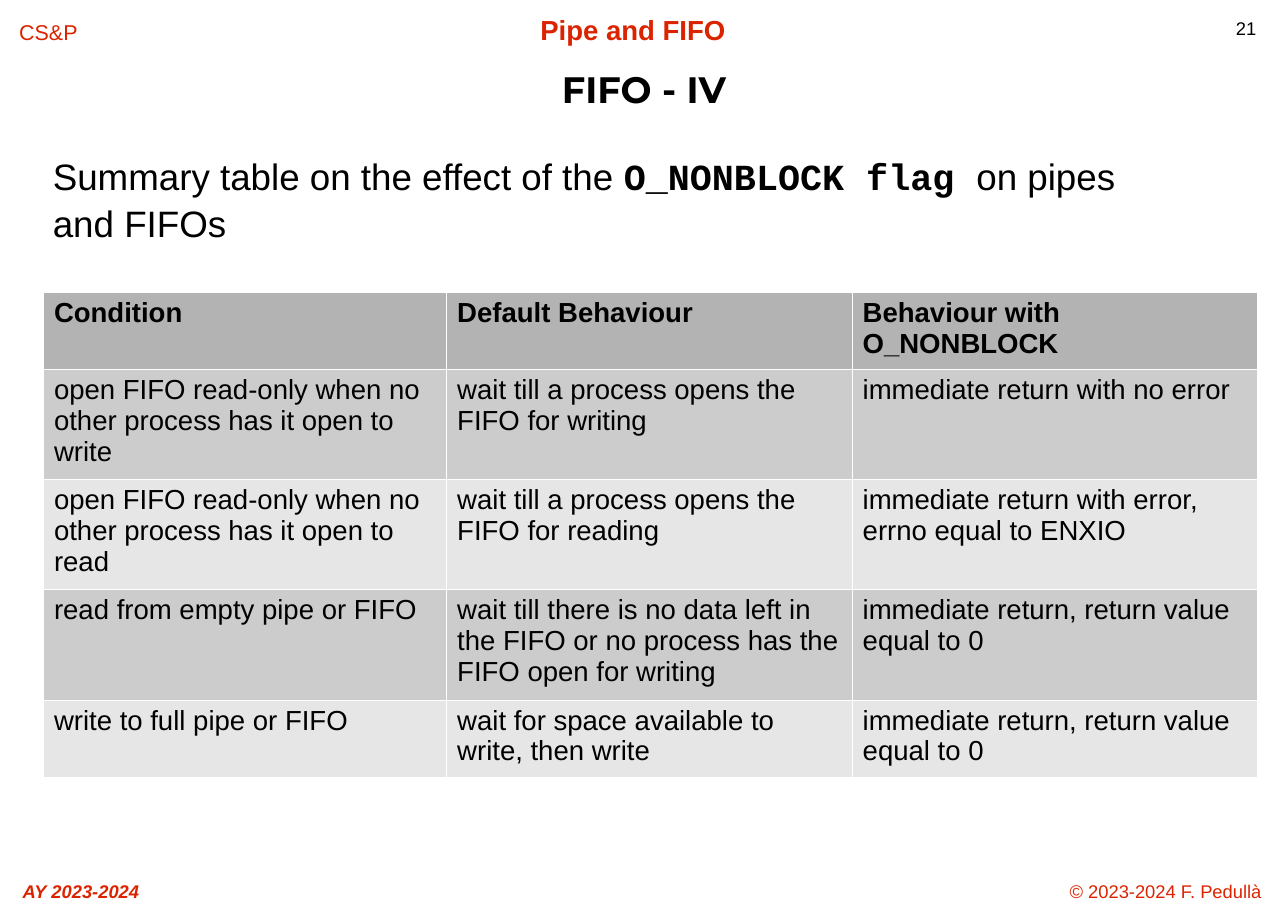
import pptx
import pptx.dml.color
import pptx.enum.text
import pptx.oxml
import pptx.oxml.ns
import pptx.util

Inches, Pt = pptx.util.Inches, pptx.util.Pt
RGBColor = pptx.dml.color.RGBColor
ALIGN, ANCHOR = pptx.enum.text.PP_ALIGN, pptx.enum.text.MSO_ANCHOR

BLACK = RGBColor(0x00, 0x00, 0x00)
RED = RGBColor(0xDC, 0x23, 0x00)
HEADER_GREY = RGBColor(0xB3, 0xB3, 0xB3)
DARK_GREY = RGBColor(0xCC, 0xCC, 0xCC)
LIGHT_GREY = RGBColor(0xE6, 0xE6, 0xE6)

COLUMN_WIDTHS = [3.66, 3.68, 3.68]
ROW_HEIGHTS = [0.66, 0.94, 0.94, 0.94, 0.66]
BEHAVIOURS = [
    ["Condition", "Default Behaviour", "Behaviour with O_NONBLOCK"],
    ["open FIFO read-only when no other process has it open to write",
     "wait till a process opens the FIFO for writing",
     "immediate return with no error"],
    ["open FIFO read-only when no other process has it open to read",
     "wait till a process opens the FIFO for reading",
     "immediate return with error, errno equal to ENXIO"],
    ["read from empty pipe or FIFO",
     "wait till there is no data left in the FIFO or no process has the FIFO open for writing",
     "immediate return, return value equal to 0"],
    ["write to full pipe or FIFO",
     "wait for space available to write, then write",
     "immediate return, return value equal to 0"],
]


def add_run(p, text, size=18, font="Arial", color=BLACK, bold=False, italic=False):
    r = p.add_run()
    r.text = text
    r.font.name, r.font.size = font, Pt(size)
    r.font.bold, r.font.italic = bold, italic
    r.font.color.rgb = color


def add_white_borders(cell):
    tcPr = cell._tc.get_or_add_tcPr()
    for side in ("lnL", "lnR", "lnT", "lnB"):
        tcPr.append(pptx.oxml.parse_xml(
            f'<a:{side} {pptx.oxml.ns.nsdecls("a")} w="720"><a:solidFill>'
            f'<a:srgbClr val="FFFFFF"/></a:solidFill></a:{side}>'))


class LectureSlide:
    def __init__(self, prs):
        self.s = prs.slides.add_slide(prs.slide_layouts[5])

    def title(self, text, left, top, width, height):
        sp = self.s.shapes.title
        sp.left, sp.top = Inches(left), Inches(top)
        sp.width, sp.height = Inches(width), Inches(height)
        tf = sp.text_frame
        tf.vertical_anchor = ANCHOR.MIDDLE
        tf.auto_size = pptx.enum.text.MSO_AUTO_SIZE.NONE
        p = tf.paragraphs[0]
        p.alignment, p.line_spacing = ALIGN.CENTER, 0.85
        add_run(p, text, size=24, font="Montserrat", bold=True)

    def text_box(self, left, top, width, height, align=ALIGN.LEFT, spacing=1.01):
        """Add an empty wrapping box and return its text frame."""
        sp = self.s.shapes.add_textbox(Inches(left), Inches(top), Inches(width), Inches(height))
        tf = sp.text_frame
        tf.word_wrap = True
        p = tf.paragraphs[0]
        p.alignment, p.line_spacing = align, spacing
        return tf

    def label(self, text, left, top, width, height, align=ALIGN.CENTER, **fmt):
        tf = self.text_box(left, top, width, height, align)
        add_run(tf.paragraphs[0], text, **fmt)

    def summary(self, runs, left, top, width, height):
        tf = self.text_box(left, top, width, height, spacing=1.05)
        tf.margin_left = tf.margin_right = tf.margin_top = tf.margin_bottom = 0
        for text, fmt in runs:
            add_run(tf.paragraphs[0], text, size=24, **fmt)

    def table(self, rows, left, top, widths, heights):
        table = self.s.shapes.add_table(
            len(rows), len(widths), Inches(left), Inches(top),
            Inches(sum(widths)), Inches(sum(heights))).table
        table.horz_banding = False
        for column, width in zip(table.columns, widths):
            column.width = Inches(width)
        for i, (row, height) in enumerate(zip(rows, heights)):
            table.rows[i].height = Inches(height)
            band = DARK_GREY if i % 2 else LIGHT_GREY
            for j, text in enumerate(row):
                cell = table.cell(i, j)
                add_white_borders(cell)
                cell.fill.solid()
                cell.fill.fore_color.rgb = band if i else HEADER_GREY
                add_run(cell.text_frame.paragraphs[0], text, bold=i == 0)


def main():
    prs = pptx.Presentation()
    prs.slide_width, prs.slide_height = Inches(11.69), Inches(8.27)
    slide = LectureSlide(prs)
    slide.label("21", 11.12, 0.1, 0.57, 0.35, align=ALIGN.LEFT, size=12)
    slide.label("© 2023-2024 F. Pedullà", 9.47, 7.94, 2.22, 0.33, size=12, color=RED)
    slide.label("AY 2023-2024", 0, 7.94, 1.47, 0.33, size=12, color=RED, bold=True, italic=True)
    slide.label("Pipe and FIFO", 4.15, 0.07, 3.19, 0.33, color=RED, bold=True)
    slide.label("CS&P", 0.06, 0.12, 0.76, 0.33, size=14, color=RED)
    slide.title("FIFO - IV", 0.27, 0.52, 11.15, 0.63)
    slide.summary([
        ("Summary table on the effect of the ", {}),
        ("O_NONBLOCK flag ", {"font": "Courier New", "bold": True}),
        ("on pipes and FIFOs", {}),
    ], 0.48, 1.38, 10.27, 0.9)
    slide.table(BEHAVIOURS, 0.39, 2.65, COLUMN_WIDTHS, ROW_HEIGHTS)
    prs.save("out.pptx")


if __name__ == "__main__":
    main()
